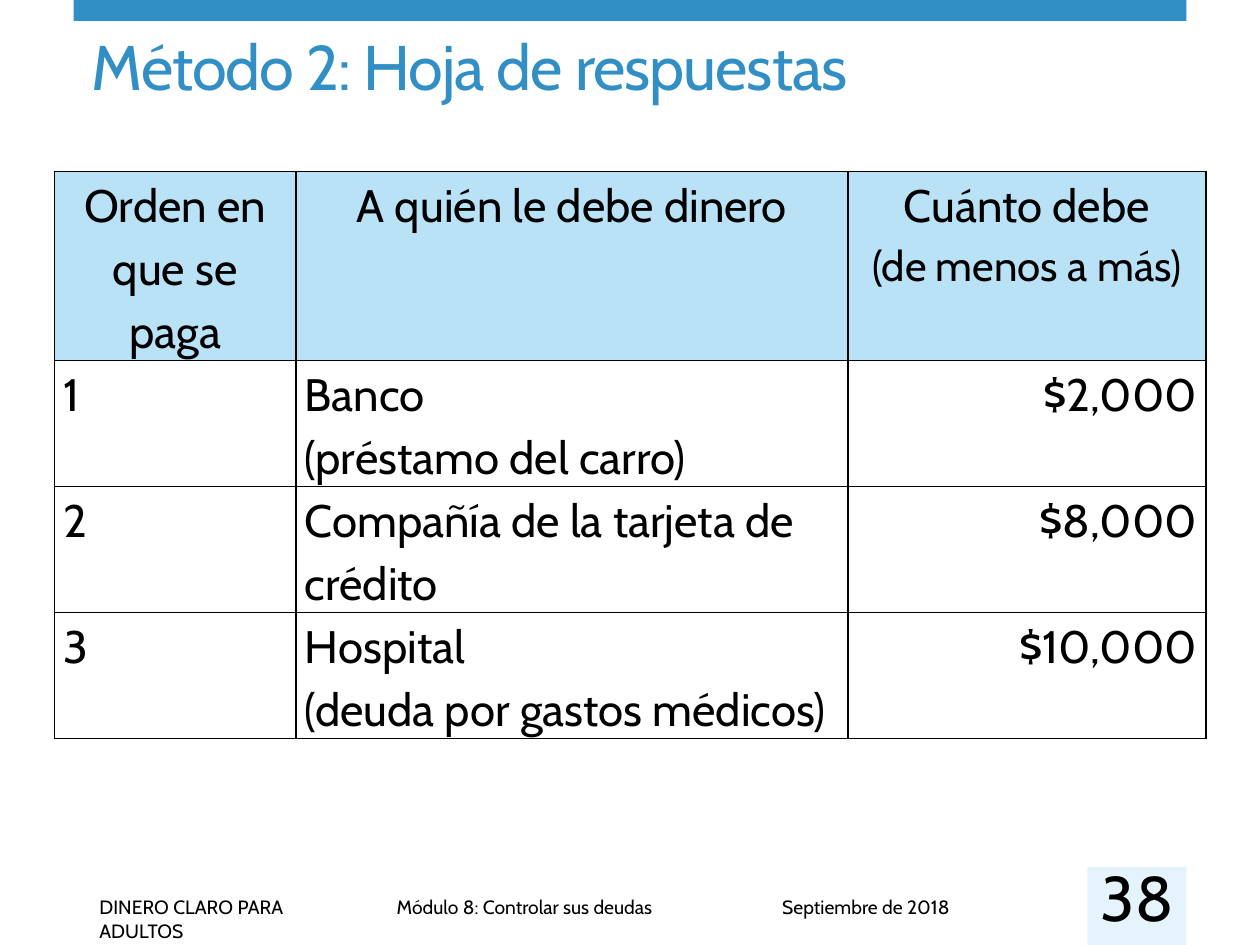
"""Build the answer sheet slide for the second debt repayment method."""
from lxml.etree import SubElement
from pptx import Presentation
from pptx.dml.color import RGBColor
from pptx.enum.shapes import MSO_SHAPE
from pptx.enum.text import MSO_ANCHOR, PP_ALIGN
from pptx.oxml.ns import qn
from pptx.util import Pt


def color(value):
    return RGBColor.from_string(value)


def write(para, text, size, ink="000000", **format_values):
    para.text = text
    for name, value in format_values.items():
        setattr(para, name, value)
    for span in para.runs:
        for name, value in {"name": "Cabin", "size": Pt(size)}.items():
            setattr(span.font, name, value)
        span.font.color.rgb = color(ink)


deck = Presentation()
deck.slide_width, deck.slide_height = Pt(720), Pt(540)
page = deck.slides.add_slide(deck.slide_layouts[6])

for left, top, width, height, fill in [
    (42, 0, 636, 12, "318FC5"),
    (621.4, 495.4, 56.6, 44.6, "E4F3FC"),
]:
    block = page.shapes.add_shape(MSO_SHAPE.RECTANGLE, Pt(left), Pt(top), Pt(width), Pt(height))
    block.shadow.inherit = False
    block.fill.solid()
    block.fill.fore_color.rgb = color(fill)
    block.line.fill.background()

for text, left, top, width, height, size, ink, frame_values, align in [
    ("DINERO CLARO PARA ADULTOS", 49.7, 508.3, 160.5, 21, 11, "000000", {}, PP_ALIGN.LEFT),
    ("Módulo 8: Controlar sus deudas", 219.6, 508.3, 407.5, 21, 11, "000000", {}, PP_ALIGN.LEFT),
    ("Septiembre de 2018", 439.9, 508.3, 181.4, 21, 11, "000000", {}, PP_ALIGN.LEFT),
    ("Método 2: Hoja de respuestas", 45.4, 13, 590.4, 49.7, 36, "318FC5",
     {"vertical_anchor": MSO_ANCHOR.BOTTOM}, PP_ALIGN.LEFT),
    ("38", 621.4, 501.1, 56.6, 22.3, 36, "000000",
     {"vertical_anchor": MSO_ANCHOR.MIDDLE, "margin_left": 0, "margin_right": 0,
      "margin_top": 0, "margin_bottom": 0}, PP_ALIGN.CENTER),
]:
    box = page.shapes.add_textbox(Pt(left), Pt(top), Pt(width), Pt(height))
    for name, value in {"word_wrap": True, **frame_values}.items():
        setattr(box.text_frame, name, value)
    para = box.text_frame.paragraphs[0]
    write(para, text, size, ink, alignment=align)
    if ink == "318FC5":
        para.runs[0].font._element.set("spc", "-60")

rows = [
    ["Orden en que se paga", "A quién le debe dinero", "Cuánto debe"],
    ["1", "Banco\n(préstamo del carro)", "$2,000"],
    ["2", "Compañía de la tarjeta de crédito", "$8,000"],
    ["3", "Hospital\n(deuda por gastos médicos)", "$10,000"],
]
column_widths = [138.2, 315.4, 204.5]
row_heights = [108, 72, 72, 72]
table = page.shapes.add_table(
    len(rows), len(column_widths), Pt(31), Pt(97.9), Pt(sum(column_widths)), Pt(sum(row_heights))
).table
for column, width in zip(table.columns, column_widths):
    column.width = Pt(width)
for row, height in zip(table.rows, row_heights):
    row.height = Pt(height)

cell_margins = {"margin_left": Pt(5), "margin_right": Pt(5), "margin_top": 0, "margin_bottom": 0}
body_aligns = [PP_ALIGN.LEFT, PP_ALIGN.LEFT, PP_ALIGN.RIGHT]
for row_index, texts in enumerate(rows):
    for column_index, text in enumerate(texts):
        cell = table.cell(row_index, column_index)
        for name, value in cell_margins.items():
            setattr(cell, name, value)
        properties = cell._tc.get_or_add_tcPr()
        for side in ("lnL", "lnR", "lnT", "lnB"):
            border = SubElement(properties, qn(f"a:{side}"), w=str(Pt(1)))
            SubElement(SubElement(border, qn("a:solidFill")), qn("a:srgbClr"), val="000000")
        if row_index == 0:
            cell.fill.solid()
            cell.fill.fore_color.rgb = color("BAE2F7")
        else:
            cell.fill.background()
        align = body_aligns[column_index] if row_index else PP_ALIGN.CENTER
        space = 0 if text == "Cuánto debe" else 12
        write(cell.text_frame.paragraphs[0], text, 26,
              alignment=align, line_spacing=1.14, space_after=Pt(space))

write(table.cell(0, 2).text_frame.add_paragraph(), "(de menos a más)", 24,
      alignment=PP_ALIGN.CENTER, line_spacing=1.14)

deck.save("out.pptx")
